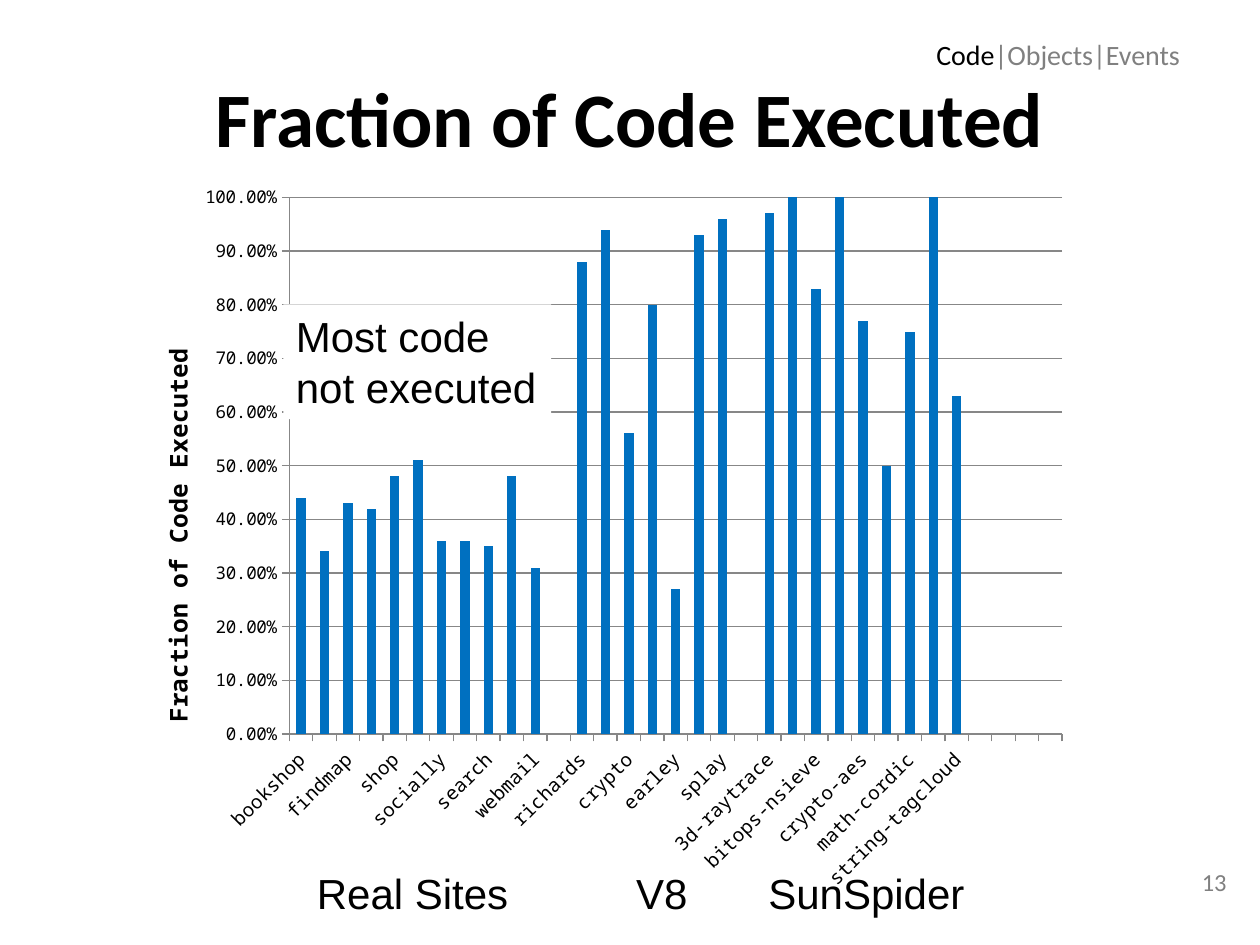
from lxml import etree
from pptx import Presentation
from pptx import util as u
from pptx.chart import data
from pptx.dml.color import RGBColor
from pptx.enum import chart as ch, shapes, text
from pptx.oxml import parse_xml
from pptx.oxml.ns import nsdecls, qn

Pt = u.Pt
BLACK = RGBColor(0, 0, 0)
WHITE = RGBColor(255, 255, 255)
GREY = RGBColor(128, 128, 128)
RULE = RGBColor(135, 135, 135)
BLUE = RGBColor(0, 112, 192)
MONO = "Noto Sans Mono"

# Bars of each suite; one empty slot parts the suites
SITES = [("bookshop", 0.44), ("find", 0.34), ("findmap", 0.43), ("news", 0.42),
         ("shop", 0.48), ("economics", 0.51), ("socially", 0.36),
         ("email", 0.36), ("search", 0.35), ("searchmap", 0.48),
         ("webmail", 0.31)]
V8 = [("richards", 0.88), ("deltablue", 0.94), ("crypto", 0.56),
      ("raytrace", 0.8), ("earley", 0.27), ("regexp", 0.93), ("splay", 0.96)]
SPIDER = [("3d-raytrace", 0.97), ("access-nbody", 1), ("bitops-nsieve", 0.83),
          ("controlflow", 1), ("crypto-aes", 0.77), ("date-xparb", 0.5),
          ("math-cordic", 0.75), ("regexp-dna", 1), ("string-tagcloud", 0.63)]
GAP = [("", None)]
BARS = SITES + GAP + V8 + GAP + SPIDER + GAP * 4


def style(font, size, name="Calibri", color=BLACK, bold=False):
    font.size, font.name, font.bold = Pt(size), name, bold
    font.color.rgb = color


def write(shape, parts, align=text.PP_ALIGN.LEFT, wrap=True, tabs=(),
          anchor=text.MSO_ANCHOR.TOP, **look):
    """Fill a shape with (text, colour) parts; a newline breaks the line."""
    frame = shape.text_frame
    frame.word_wrap, frame.vertical_anchor = wrap, anchor
    para = frame.paragraphs[0]
    para.alignment = align
    if tabs:
        stops = etree.SubElement(para._p.get_or_add_pPr(), qn("a:tabLst"))
        for pos in tabs:
            etree.SubElement(stops, qn("a:tab"), pos=str(Pt(pos)), algn="l")
    for words, color in parts:
        for i, line in enumerate(words.split("\n")):
            if i:
                para.add_line_break()
            run = para.add_run()
            run.text = line
            style(run.font, color=color, **look)


def label(slide, box, parts, **look):
    shape = slide.shapes.add_textbox(*map(Pt, box))
    write(shape, parts, **look)


def panel(slide, box, parts, **look):
    shape = slide.shapes.add_shape(shapes.MSO_SHAPE.RECTANGLE, *map(Pt, box))
    shape.shadow.inherit = False
    shape.fill.solid()
    shape.fill.fore_color.rgb = WHITE
    shape.line.fill.background()
    write(shape, parts, **look)


def layout(**spots):
    """Manual layout, in fractions of the chart."""
    marks = "".join(f'<c:{k} val="{v}"/>' for k, v in spots.items())
    return parse_xml(f'<c:layout {nsdecls("c")}><c:manualLayout>{marks}'
                     '</c:manualLayout></c:layout>')


def place(node, new, index):
    for old in node.findall(qn("c:layout")):
        node.remove(old)
    node.insert(index, new)


def bars(slide, box):
    info = data.CategoryChartData(number_format="0.00%")
    info.categories = [name for name, _ in BARS]
    info.add_series("Series 1", [val for _, val in BARS])
    chart = slide.shapes.add_chart(ch.XL_CHART_TYPE.COLUMN_CLUSTERED,
                                   *map(Pt, box), info).chart
    chart.has_legend = chart.has_title = False
    style(chart.font, 10, MONO)

    # Columns
    plot = chart.plots[0]
    plot.gap_width, plot.vary_by_categories = 150, False
    fill = plot.series[0].format.fill
    fill.solid()
    fill.fore_color.rgb = BLUE

    # Axes
    cat, val = chart.category_axis, chart.value_axis
    for axis, size in ((cat, 11), (val, 10)):
        axis.major_tick_mark = ch.XL_TICK_MARK.OUTSIDE
        axis.format.line.color.rgb = RULE
        style(axis.tick_labels.font, size, MONO)
    cat._element.txPr.find(qn("a:bodyPr")).set("rot", "-2700000")
    skip = parse_xml(f'<c:tickLblSkip {nsdecls("c")} val="2"/>')
    cat._element.find(qn("c:noMultiLvlLbl")).addprevious(skip)
    val.minimum_scale, val.maximum_scale, val.major_unit = 0, 1, 0.1
    val.tick_labels.number_format = "0.00%"
    val.tick_labels.number_format_is_linked = False
    val.has_major_gridlines = True
    val.major_gridlines.format.line.color.rgb = RULE

    # Axis title, turned to read upwards
    title = val.axis_title
    frame = title.text_frame
    frame.text = "Fraction of Code Executed"
    style(frame.paragraphs[0].runs[0].font, 14, MONO, bold=True)
    body = frame._txBody.find(qn("a:bodyPr"))
    body.set("rot", "-5400000")
    body.set("vert", "horz")
    place(title._element, layout(xMode="edge", yMode="edge", x=0.04, y=0.24), 1)
    place(chart._chartSpace.chart.plotArea,
          layout(layoutTarget="inner", xMode="edge", yMode="edge",
                 x=0.18, y=0.04, w=0.8, h=0.73), 0)


def main():
    deck = Presentation()
    deck.slide_width, deck.slide_height = Pt(720), Pt(540)
    slide = deck.slides.add_slide(deck.slide_layouts[6])

    # Title and page number
    label(slide, (36, 21.6, 648, 90), [("Fraction of Code Executed", BLACK)],
          size=44, bold=True, align=text.PP_ALIGN.CENTER,
          anchor=text.MSO_ANCHOR.MIDDLE)
    label(slide, (540, 492, 168, 37.5), [("13", GREY)], size=14,
          align=text.PP_ALIGN.RIGHT)

    # Chart with its note and suite names
    bars(slide, (66, 96, 552, 420))
    panel(slide, (162, 174, 153, 65.5), [("Most code\nnot executed", BLACK)],
          size=24, name="Arial", wrap=False)
    label(slide, (174, 492, 402, 36), [("Real Sites\tV8\tSunSpider", BLACK)],
          size=24, name="Arial", tabs=(182.5, 258))

    # Section tracker
    label(slide, (528, 18, 180, 26.6),
          [("Code", BLACK), ("|Objects|Events", GREY)], size=16)

    deck.save("out.pptx")


if __name__ == "__main__":
    main()
